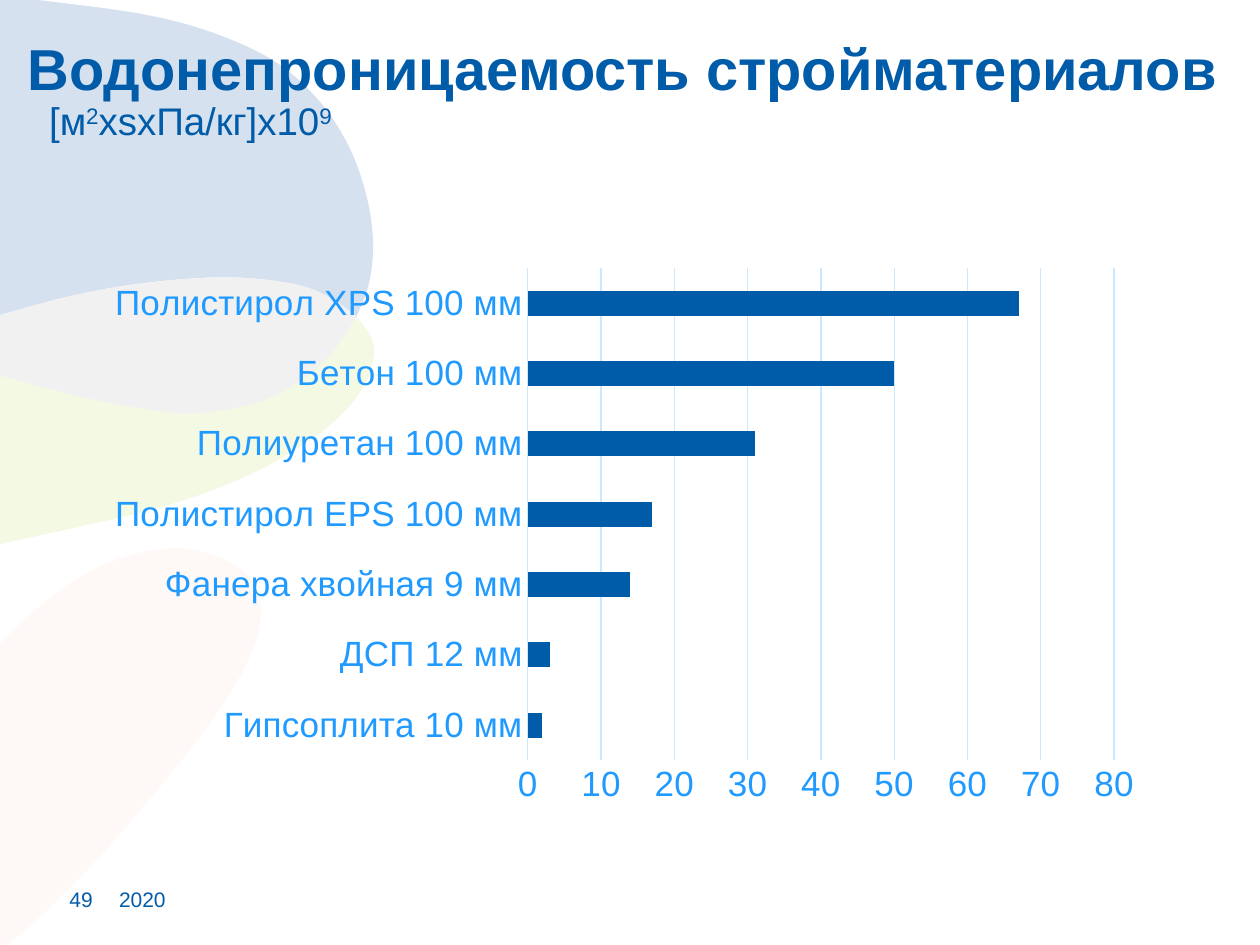
from dataclasses import dataclass

from lxml.etree import SubElement
from pptx import Presentation
from pptx.chart.data import CategoryChartData
from pptx.dml.color import RGBColor
from pptx.enum.chart import XL_CHART_TYPE, XL_TICK_MARK
from pptx.enum.text import MSO_ANCHOR, MSO_AUTO_SIZE, PP_ALIGN
from pptx.oxml import parse_xml
from pptx.oxml.ns import nsdecls, qn
from pptx.util import Cm, Pt


@dataclass(frozen=True)
class Theme:
    """Colours, font and type sizes of the slide."""
    font: str = "Arial"
    primary: RGBColor = RGBColor(0x00, 0x5C, 0xA8)
    axis_text: RGBColor = RGBColor(0x21, 0x9A, 0xFF)
    grid: RGBColor = RGBColor(0xCC, 0xE8, 0xFF)
    rose: RGBColor = RGBColor(0xFE, 0xF9, 0xF7)
    lime: RGBColor = RGBColor(0xF3, 0xF9, 0xE3)
    sky: RGBColor = RGBColor(0xD6, 0xE1, 0xF0)
    overlap: RGBColor = RGBColor(0xF1, 0xF1, 0xF1)
    title_size: Pt = Pt(33)
    unit_size: Pt = Pt(22)
    axis_size: Pt = Pt(20)
    footer_size: Pt = Pt(12)


THEME = Theme()

RESISTANCE = {
    "Гипсоплита 10 мм": 2,
    "ДСП 12 мм": 3,
    "Фанера хвойная 9 мм": 14,
    "Полистирол EPS 100 мм": 17,
    "Полиуретан 100 мм": 31,
    "Бетон 100 мм": 50,
    "Полистирол ХPS 100 мм": 67,
}

OVERLAP_TOP = [(0, 6.35), (1.42, 5.97), (2.87, 5.71), (4.52, 5.59), (5.84, 5.71),
               (6.6, 5.97), (7.19, 6.38)]
OVERLAP_BOTTOM = [(7.19, 6.38), (6.71, 7.09), (6.1, 7.65), (5.23, 8.1), (3.96, 8.33),
                  (2.95, 8.25), (1.63, 8), (0, 7.57)]
SKY_EDGE = [(7.19, 6.38), (7.44, 5.71), (7.52, 4.88), (7.39, 3.96), (7.04, 2.97),
            (6.43, 2.03), (5.54, 1.24), (4.29, 0.66), (2.84, 0.28), (0.76, 0)]
LIME_EDGE = [(0, 10.97), (1.5, 10.64), (3.12, 10.26), (4.42, 9.83), (5.56, 9.3),
             (6.63, 8.59), (7.32, 7.82), (7.54, 7.14), (7.47, 6.78), (7.19, 6.38)]
ROSE_EDGE = [(0, 13), (0.81, 12.22), (1.7, 11.58), (2.59, 11.2), (3.53, 11.05),
             (4.29, 11.18), (4.9, 11.51), (5.21, 11.99), (5.23, 12.65), (4.93, 13.46),
             (4.29, 14.5), (3.3, 15.77), (2.01, 17.27), (0.99, 18.31), (0.15, 19.05)]


def smooth_curve(points, steps=6):
    """Return a Catmull-Rom curve through the points."""
    padded = [points[0], *points, points[-1]]
    curve = [points[0]]
    for before, start, end, after in zip(padded, padded[1:], padded[2:], padded[3:]):
        for step in range(1, steps + 1):
            t = step / steps
            curve.append(tuple(
                b + ((c - a) * t + (2 * a - 5 * b + 4 * c - d) * t ** 2
                     + (3 * b - a - 3 * c + d) * t ** 3) / 2
                for a, b, c, d in zip(before, start, end, after)))
    return curve


def add_petals(slide, left, top):
    """Draw the overlapping petals from the given corner."""
    petals = [
        (THEME.rose, [ROSE_EDGE, [(0, 19.05)]]),
        (THEME.lime, [OVERLAP_BOTTOM, LIME_EDGE]),
        (THEME.sky, [OVERLAP_TOP, SKY_EDGE, [(0, 0)]]),
        (THEME.overlap, [OVERLAP_TOP, OVERLAP_BOTTOM]),
    ]
    for color, edges in petals:
        outline = [(left + Cm(x), top + Cm(y))
                   for edge in edges for x, y in smooth_curve(edge)]
        builder = slide.shapes.build_freeform(*outline[0])
        builder.add_line_segments(outline[1:], close=True)
        petal = builder.convert_to_shape()
        petal.fill.solid()
        petal.fill.fore_color.rgb = color
        petal.line.fill.background()
        petal.shadow.inherit = False


def format_font(font, size, color, bold=False):
    """Apply the theme font with a size and colour."""
    font.name = THEME.font
    font.size = size
    font.color.rgb = color
    font.bold = bold


def format_frame(frame, anchor):
    """Remove the margins and set wrapping and anchor."""
    frame.margin_left = frame.margin_right = frame.margin_top = frame.margin_bottom = 0
    frame.word_wrap = True
    frame.auto_size = MSO_AUTO_SIZE.NONE
    frame.vertical_anchor = anchor


def add_title(slide, left, top, width, height):
    """Fill the title placeholder with the heading and its unit."""
    title = slide.shapes.title
    title.left, title.top, title.width, title.height = left, top, width, height
    title.element.getparent().append(title.element)
    frame = title.text_frame
    format_frame(frame, MSO_ANCHOR.TOP)
    heading, unit = frame.paragraphs[0], frame.add_paragraph()
    heading.text = "Водонепроницаемость стройматериалов"
    for text, raised in [("[м", False), ("2", True), ("xsxПа/кг]x10", False), ("9", True)]:
        run = unit.add_run()
        run.text = text
        if raised:
            run.font._element.set("baseline", "30000")
    unit._p.get_or_add_pPr().set("marL", str(Cm(0.43)))
    for paragraph, size, bold in [(heading, THEME.title_size, True),
                                  (unit, THEME.unit_size, False)]:
        paragraph.alignment = PP_ALIGN.LEFT
        paragraph.line_spacing = 0.9
        paragraph.space_before = Pt(0)
        format_font(paragraph.font, size, THEME.primary, bold)


def set_plot_layout(chart, **fractions):
    """Fix the inner plot area as fractions of the chart."""
    plot_area = chart._chartSpace.find(".//" + qn("c:plotArea"))
    for existing in plot_area.findall(qn("c:layout")):
        plot_area.remove(existing)
    layout = parse_xml(f"<c:layout {nsdecls('c')}><c:manualLayout/></c:layout>")
    settings = {"layoutTarget": "inner", "xMode": "edge", "yMode": "edge", **fractions}
    for name, value in settings.items():
        SubElement(layout[0], qn(f"c:{name}")).set("val", str(value))
    plot_area.insert(0, layout)


def add_resistance_chart(slide, left, top, width, height):
    """Add the bar chart of material resistance."""
    data = CategoryChartData()
    data.categories = list(RESISTANCE)
    data.add_series("Series 1", list(RESISTANCE.values()))
    chart = slide.shapes.add_chart(
        XL_CHART_TYPE.BAR_CLUSTERED, left, top, width, height, data).chart
    chart.has_legend = False
    chart.has_title = False
    format_font(chart.font, Pt(10), THEME.primary)
    set_plot_layout(chart, x=0.41, y=0.02, w=0.55, h=0.88)

    plot = chart.plots[0]
    plot.gap_width = 182
    plot.vary_by_categories = False
    fill = plot.series[0].format.fill
    fill.solid()
    fill.fore_color.rgb = THEME.primary

    values, categories = chart.value_axis, chart.category_axis
    for axis in (values, categories):
        axis.major_tick_mark = axis.minor_tick_mark = XL_TICK_MARK.NONE
        format_font(axis.tick_labels.font, THEME.axis_size, THEME.axis_text)
    values.minimum_scale, values.maximum_scale, values.major_unit = 0, 80, 10
    values.format.line.fill.background()
    categories.has_major_gridlines = False
    for line in (values.major_gridlines.format.line, categories.format.line):
        line.color.rgb = THEME.grid
        line.width = Pt(0.75)


def add_footer(slide, left, top, height):
    """Place the page number and the year side by side."""
    for text, width in [("49", Cm(1)), ("2020", Cm(1.78))]:
        frame = slide.shapes.add_textbox(left, top, width, height).text_frame
        format_frame(frame, MSO_ANCHOR.BOTTOM)
        paragraph = frame.paragraphs[0]
        paragraph.text = text
        format_font(paragraph.font, THEME.footer_size, THEME.primary)
        left += width


def main():
    """Build the slide and save it."""
    presentation = Presentation()
    presentation.slide_width, presentation.slide_height = Cm(25.4), Cm(19.05)
    slide = presentation.slides.add_slide(presentation.slide_layouts[5])
    add_petals(slide, Cm(0), Cm(0))
    add_footer(slide, Cm(1.4), Cm(17.96), Cm(0.41))
    add_resistance_chart(slide, Cm(1.83), Cm(5.18), Cm(21.49), Cm(11.28))
    add_title(slide, Cm(0.56), Cm(0.81), Cm(24.84), Cm(3.07))
    presentation.save("out.pptx")


if __name__ == "__main__":
    main()
